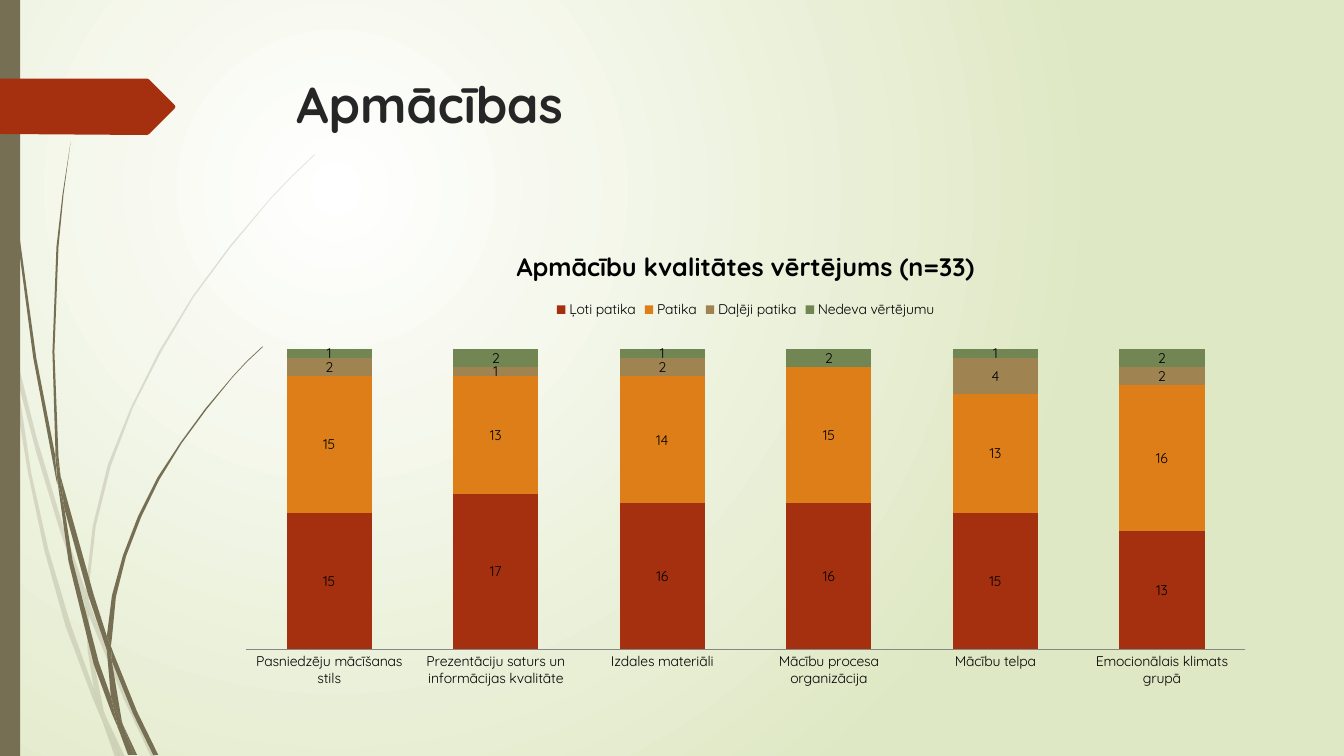
import dataclasses

import lxml.etree
import pptx
import pptx.chart.data
import pptx.dml.color
import pptx.enum.chart
import pptx.enum.text
import pptx.enum.shapes
import pptx.oxml.ns
import pptx.util

COLUMNS, ROWS = 13.33, 7.5
COLUMN = ROW = pptx.util.Inches(1)


@dataclasses.dataclass(frozen=True)
class Theme:
    """Colours, font and type sizes of the slide."""
    font: str = "Quicksand"
    centre: str = "FFFFFF"
    edge: str = "DFE8C4"
    stalk: str = "766F54"
    tag: str = "A53010"
    heading: str = "262626"
    ink: str = "000000"
    axis: str = "878787"
    ratings: tuple = ("A53010", "DE7E18", "9F8351", "728653")
    heading_size: int = 36
    chart_title_size: int = 18
    chart_size: int = 10
    pale_alpha: int = 20


THEME = Theme()

PALE_STALKS = [
    [(0.11, 3.5), (0.09, 3.22), (0, 2.82), (0, 2.99), (0.1, 3.44)],
    [(0.58, 5.22), (0.84, 5.99), (0.85, 5.86), (0.62, 5.2), (0.36, 4.33), (0.14, 3.45),
     (0.17, 3.76), (0.36, 4.49)],
    [(0.92, 6.07), (0.88, 5.96), (0.88, 6.1), (1.23, 6.94), (1.5, 7.51), (1.55, 7.51),
     (1.27, 6.92)],
    [(1.19, 7.51), (1.24, 7.51), (1.05, 7.11)],
    [(0.93, 6.83), (0.7, 6.19), (0.48, 5.45), (0.31, 4.69), (0.17, 3.76), (0.11, 3.5),
     (0.18, 4.1), (0.28, 4.7), (0.44, 5.46), (0.65, 6.21), (0.92, 6.93), (1.01, 7.14),
     (0.99, 7.07)],
    [(0.84, 5.99), (0.87, 6.46), (0.93, 6.83), (0.96, 6.92), (1.05, 7.11), (1.03, 7.06),
     (0.91, 6.46), (0.88, 6.1), (0.88, 6.08)],
    [(0.88, 5.84), (0.95, 5.22), (1.1, 4.62), (1.32, 4.04), (1.6, 3.49), (1.92, 2.95),
     (2.29, 2.45), (2.68, 1.98), (2.9, 1.75), (3.12, 1.54), (3.12, 1.53), (2.89, 1.75),
     (2.68, 1.97), (2.28, 2.44), (1.91, 2.94), (1.58, 3.48), (1.3, 4.04), (1.07, 4.61),
     (0.92, 5.22), (0.85, 5.84), (0.85, 5.86), (0.88, 5.96)],
    [(1.01, 7.14), (1.14, 7.51), (1.19, 7.51)],
    [(0.88, 6.08), (0.88, 6.1), (0.88, 5.96), (0.85, 5.86), (0.84, 5.99)],
    [(0.96, 6.92), (0.93, 6.83), (0.99, 7.07), (1.01, 7.14), (1.19, 7.51), (1.05, 7.11)],
]
DARK_STALKS = [
    [(0.07, 1.1), (0.17, 2.33), (0.33, 3.55), (0.56, 4.77), (0.57, 4.81), (0.55, 4.57),
     (0.55, 4.53), (0.36, 3.55), (0.19, 2.32), (0.08, 1.09), (0.05, 0.48), (0.04, 0),
     (0.03, 0), (0.04, 0.48)],
    [(0.88, 5.92), (1.06, 6.45), (1.06, 6.33), (1.06, 6.31), (0.93, 5.9), (0.6, 4.72),
     (0.64, 5.05)],
    [(1.13, 6.49), (1.1, 6.41), (1.11, 6.56), (1.32, 7.08), (1.52, 7.49), (1.57, 7.49),
     (1.36, 7.06)],
    [(1.1, 6.91), (0.98, 6.57), (0.72, 5.56), (0.64, 5.05), (0.57, 4.77), (0.68, 5.57),
     (0.93, 6.59), (1.11, 7.08), (1.17, 7.22), (1.16, 7.17)],
    [(0.6, 4.72), (0.58, 4.53), (0.54, 3.49), (0.58, 2.45), (0.63, 1.93), (0.7, 1.41),
     (0.62, 1.93), (0.56, 2.45), (0.52, 3.49), (0.55, 4.49)],
    [(1.33, 7.49), (1.36, 7.49), (1.22, 7.19)],
    [(0.57, 4.77), (0.64, 5.05), (0.6, 4.72), (0.55, 4.49), (0.55, 4.53)],
    [(1.11, 6.33), (1.15, 5.92), (1.25, 5.52), (1.4, 5.13), (1.58, 4.76), (1.8, 4.4),
     (2.05, 4.06), (2.31, 3.74), (2.45, 3.59), (2.61, 3.44), (2.6, 3.44), (2.45, 3.58),
     (2.31, 3.73), (2.04, 4.05), (1.79, 4.39), (1.56, 4.74), (1.37, 5.12), (1.22, 5.51),
     (1.11, 5.91), (1.06, 6.31), (1.1, 6.41)],
    [(1.17, 7.22), (1.27, 7.49), (1.31, 7.49)],
    [(1.06, 6.45), (1.1, 6.91), (1.16, 7.06), (1.22, 7.19), (1.21, 7.16), (1.11, 6.56),
     (1.09, 6.51)],
    [(1.06, 6.45), (1.09, 6.51), (1.11, 6.56), (1.1, 6.41), (1.06, 6.31), (1.06, 6.33)],
    [(1.16, 7.06), (1.1, 6.91), (1.16, 7.17), (1.17, 7.22), (1.3, 7.49), (1.33, 7.49),
     (1.22, 7.19)],
]
TAG = [(1.73, 1.08), (1.48, 1.33), (1.46, 1.34), (0, 1.33), (0, 0.78), (1.46, 0.78),
       (1.48, 0.79), (1.73, 1.04), (1.74, 1.06)]

TOPICS = ["Pasniedzēju mācīšanas stils", "Prezentāciju saturs un informācijas kvalitāte",
          "Izdales materiāli", "Mācību procesa organizācija", "Mācību telpa",
          "Emocionālais klimats grupā"]
RATINGS = {
    "Ļoti patika": (15, 17, 16, 16, 15, 13),
    "Patika": (15, 13, 14, 15, 13, 16),
    "Daļēji patika": (2, 1, 2, None, 4, 2),
    "Nedeva vērtējumu": (1, 2, 1, 2, 1, 2),
}


def rgb(code):
    """Turn a hex code into a colour."""
    return pptx.dml.color.RGBColor.from_string(code)


def place(left, top, width, height):
    """Turn a box in columns and rows into slide lengths."""
    return [round(share * unit) for share, unit in
            zip((left, top, width, height), (COLUMN, ROW, COLUMN, ROW))]


def add_tag(parent, qualified_name, **attributes):
    """Append an XML element with the given attributes."""
    tag = lxml.etree.SubElement(parent, pptx.oxml.ns.qn(qualified_name))
    for key, value in attributes.items():
        tag.set(key, str(value))
    return tag


def paint(shape, colour, alpha=100):
    """Give a shape a flat fill without line or shadow."""
    shape.shadow.inherit = False
    shape.line.fill.background()
    shape.fill.solid()
    shape.fill.fore_color.rgb = rgb(colour)
    if alpha < 100:
        solid = shape.element.find(".//" + pptx.oxml.ns.qn("a:srgbClr"))
        add_tag(solid, "a:alpha", val=alpha * 1000)


def paint_background(slide):
    """Fill the slide with a glow around its upper left quarter."""
    fill = slide.background.fill
    fill.gradient()
    for stop, colour in zip(fill.gradient_stops, (THEME.centre, THEME.edge)):
        stop.color.rgb = rgb(colour)
    gradient = slide.element.find(".//" + pptx.oxml.ns.qn("a:gradFill"))
    gradient.remove(gradient.find(pptx.oxml.ns.qn("a:lin")))
    glow = add_tag(gradient, "a:path", **{"path": "circle"})
    add_tag(glow, "a:fillToRect", l=50000, t=50000, r=100000, b=100000)


def add_outline(slide, box, corners, colour, alpha=100):
    """Draw a filled outline with corners in columns and rows of the box."""
    points = [(round((box[0] + x) * COLUMN), round((box[1] + y) * ROW)) for x, y in corners]
    builder = slide.shapes.build_freeform(*points[0], scale=1.0)
    builder.add_line_segments(points[1:], close=True)
    paint(builder.convert_to_shape(), colour, alpha)


def add_decoration(slide, box):
    """Draw the stalks, the side bar and the pointed tag."""
    left, top, _, height = box
    for stalks, alpha in ((PALE_STALKS, THEME.pale_alpha), (DARK_STALKS, 100)):
        for corners in stalks:
            add_outline(slide, box, corners, THEME.stalk, alpha)
    side_bar = slide.shapes.add_shape(
        pptx.enum.shapes.MSO_SHAPE.RECTANGLE, *place(left, top, 0.2, height))
    paint(side_bar, THEME.stalk)
    add_outline(slide, box, TAG, THEME.tag)


def style_font(font, size, colour, bold=False):
    """Apply the theme font with a size, colour and weight."""
    font.name, font.size, font.bold = THEME.font, pptx.util.Pt(size), bold
    font.color.rgb = rgb(colour)


def add_heading(slide, box):
    """Move and format the title placeholder."""
    heading = slide.shapes.title
    heading.left, heading.top, heading.width, heading.height = place(*box)
    frame = heading.text_frame
    frame.text = "Apmācības"
    frame.word_wrap = True
    frame.auto_size = pptx.enum.text.MSO_AUTO_SIZE.NONE
    frame.vertical_anchor = pptx.enum.text.MSO_ANCHOR.TOP
    frame.paragraphs[0].alignment = pptx.enum.text.PP_ALIGN.LEFT
    style_font(frame.paragraphs[0].runs[0].font, THEME.heading_size, THEME.heading, True)


def fix_plot_area(chart, box, plot):
    """Set the inner plot area, in columns and rows of the chart box."""
    plot_area = chart.element.find(".//" + pptx.oxml.ns.qn("c:plotArea"))
    for old in plot_area.findall(pptx.oxml.ns.qn("c:layout")):
        plot_area.remove(old)
    layout = add_tag(plot_area, "c:layout")
    plot_area.insert(0, layout)
    manual = add_tag(layout, "c:manualLayout")
    shares = [length / whole for length, whole in zip(plot, box[2:] * 2)]
    settings = {"layoutTarget": "inner", "xMode": "edge", "yMode": "edge",
                **dict(zip("xywh", shares))}
    for key, value in settings.items():
        add_tag(manual, "c:" + key, val=value)


def add_ratings_chart(slide, box):
    """Draw the stacked columns of training ratings."""
    kinds = pptx.enum.chart
    data = pptx.chart.data.CategoryChartData()
    data.categories = TOPICS
    for rating, counts in RATINGS.items():
        data.add_series(rating, counts)
    chart = slide.shapes.add_chart(
        kinds.XL_CHART_TYPE.COLUMN_STACKED, *place(*box), data).chart
    style_font(chart.font, THEME.chart_size, THEME.ink)
    caption = chart.chart_title.text_frame
    caption.text = "Apmācību kvalitātes vērtējums (n=33)"
    for part in (caption.paragraphs[0], caption.paragraphs[0].runs[0]):
        style_font(part.font, THEME.chart_title_size, THEME.ink, True)
    chart.has_legend = True
    chart.legend.position = kinds.XL_LEGEND_POSITION.TOP
    chart.legend.include_in_layout = False
    topics, counts = chart.category_axis, chart.value_axis
    topics.major_tick_mark = kinds.XL_TICK_MARK.NONE
    topics.format.line.color.rgb = rgb(THEME.axis)
    counts.visible = counts.has_major_gridlines = False
    counts.minimum_scale, counts.maximum_scale = 0, 35
    columns = chart.plots[0]
    columns.gap_width, columns.overlap = 95, 100
    columns.vary_by_categories = False
    for rating, colour in zip(columns.series, THEME.ratings):
        rating.format.fill.solid()
        rating.format.fill.fore_color.rgb = rgb(colour)
        rating.data_labels.show_value = True
        rating.data_labels.position = kinds.XL_LABEL_POSITION.CENTER
    fix_plot_area(chart, box, (0.23, 1.02, 9.91, 3.16))


def main():
    """Build and save the slide."""
    deck = pptx.Presentation()
    deck.slide_width, deck.slide_height = round(COLUMNS * COLUMN), round(ROWS * ROW)
    slide = deck.slides.add_slide(deck.slide_layouts[5])
    paint_background(slide)
    add_decoration(slide, (0, 0, 3.12, ROWS))
    add_heading(slide, (2.84, 0.68, 9.75, 1.4))
    add_ratings_chart(slide, (2.21, 2.26, 10.37, 5.03))
    deck.save("out.pptx")


if __name__ == "__main__":
    main()
